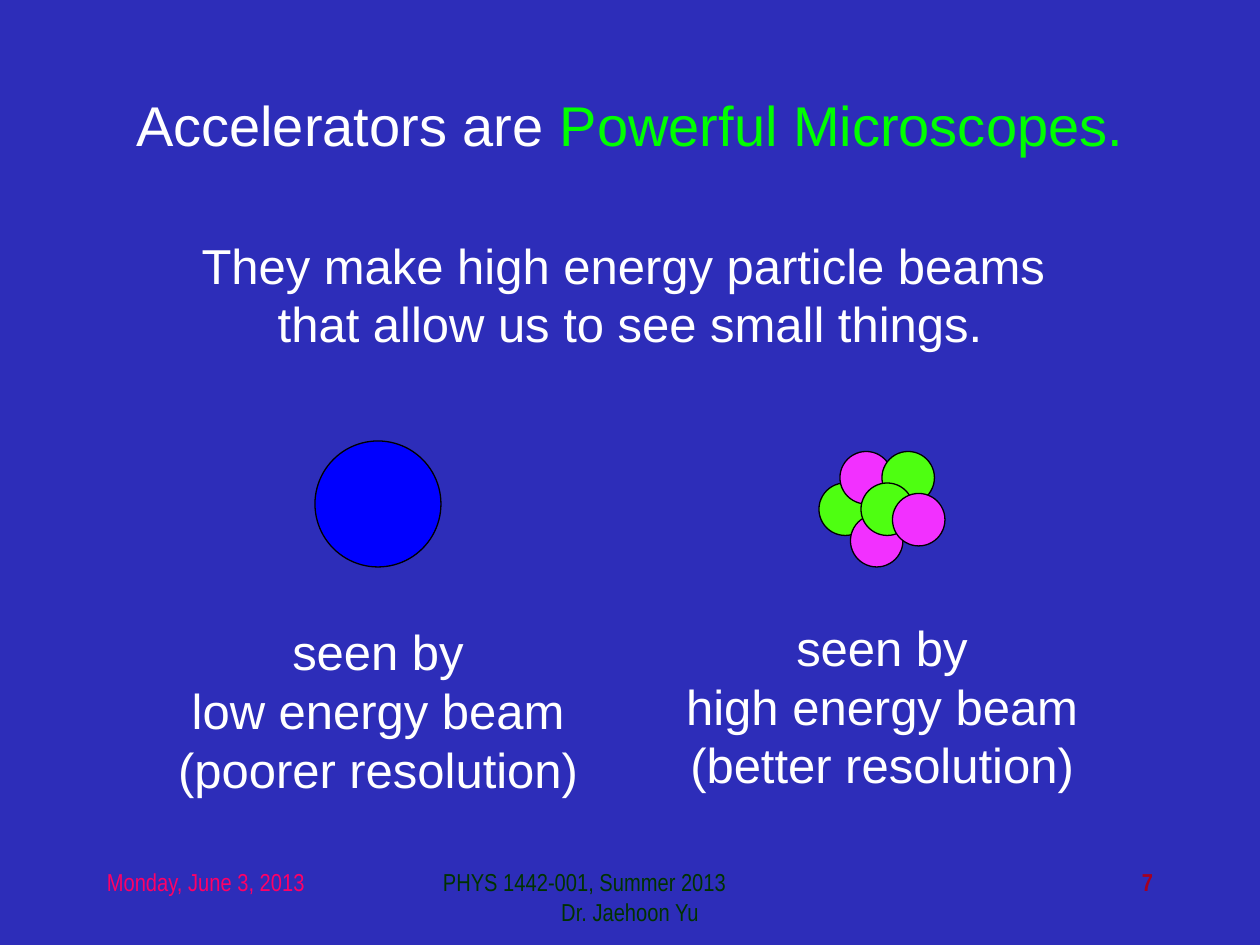
from pptx import Presentation
from pptx.dml.color import RGBColor
from pptx.enum.shapes import MSO_SHAPE as SHAPE
from pptx.enum.text import PP_ALIGN as ALIGN
from pptx.util import Inches, Pt

BACKGROUND = RGBColor(0x2D, 0x2D, 0xB9)
WHITE = RGBColor(0xFF, 0xFF, 0xFF)
BLACK = RGBColor(0x00, 0x00, 0x00)
BLUE = RGBColor(0x00, 0x00, 0xFF)
HIGHLIGHT = RGBColor(0x00, 0xFF, 0x00)
GREEN = RGBColor(0x4E, 0xFF, 0x11)
MAGENTA = RGBColor(0xF2, 0x30, 0xFF)
DATE_PINK = RGBColor(0xFF, 0x00, 0x66)
COURSE_GREEN = RGBColor(0x00, 0x33, 0x00)
NUMBER_RED = RGBColor(0xA5, 0x00, 0x21)

COLS, ROWS = 120, 90
FOOTER_ROW, FOOTER_ROWS = 82, 6


class SlideBuilder:
    """Places elements on a grid of COLS by ROWS cells."""

    def __init__(self, prs):
        self.cell_w = prs.slide_width / COLS
        self.cell_h = prs.slide_height / ROWS
        self.slide = prs.slides.add_slide(prs.slide_layouts[6])
        fill = self.slide.background.fill
        fill.solid()
        fill.fore_color.rgb = BACKGROUND

    def box(self, col, row, cols, rows):
        return (round(col * self.cell_w), round(row * self.cell_h),
                round(cols * self.cell_w), round(rows * self.cell_h))

    def text(self, area, lines, size=28, font="Arial", color=WHITE,
             aligns=(ALIGN.CENTER,), bold=False):
        """Each line is a list of (text, colour or None); the last alignment repeats."""
        tf = self.slide.shapes.add_textbox(*self.box(*area)).text_frame
        tf.word_wrap = True
        for i, runs in enumerate(lines):
            p = tf.add_paragraph() if i else tf.paragraphs[0]
            p.alignment = aligns[min(i, len(aligns) - 1)]
            p.font.size, p.font.name, p.font.bold = Pt(size), font, bold
            p.font.color.rgb = color
            for content, run_color in runs:
                r = p.add_run()
                r.text = content
                if run_color is not None:
                    r.font.color.rgb = run_color

    def plain(self, area, *lines, **style):
        self.text(area, [[(line, None)] for line in lines], **style)

    def footer(self, col, cols, *lines, **style):
        self.plain((col, FOOTER_ROW, cols, FOOTER_ROWS), *lines,
                   size=14, font="Arial Narrow", **style)

    def ball(self, col, row, size, color, shapes=None):
        shapes = self.slide.shapes if shapes is None else shapes
        sp = shapes.add_shape(SHAPE.OVAL, *self.box(col, row, size, size))
        sp.shadow.inherit = False
        sp.fill.solid()
        sp.fill.fore_color.rgb = color
        sp.line.color.rgb = BLACK
        sp.line.width = Pt(0.75)

    def cluster(self, size, balls):
        group = self.slide.shapes.add_group_shape()
        for col, row, color in balls:
            self.ball(col, row, size, color, group.shapes)


def main():
    prs = Presentation()
    prs.slide_width, prs.slide_height = Inches(10), Inches(7.5)
    s = SlideBuilder(prs)

    s.footer(9, 25, "Monday, June 3, 2013", color=DATE_PINK, aligns=(ALIGN.LEFT,))
    s.footer(41, 38, "PHYS 1442-001, Summer 2013", "Dr. Jaehoon Yu",
             color=COURSE_GREEN, aligns=(ALIGN.LEFT, ALIGN.CENTER))
    s.footer(86, 25, "7", color=NUMBER_RED, aligns=(ALIGN.RIGHT,), bold=True)

    s.ball(30, 42, 12, BLUE)
    s.cluster(5, [(78, 46, GREEN), (80, 43, MAGENTA), (81, 49, MAGENTA),
                  (84, 43, GREEN), (82, 46, GREEN), (85, 47, MAGENTA)])

    s.text((0, 8, COLS, 7.5), [[("Accelerators are ", None),
                                ("Powerful Microscopes.", HIGHLIGHT)]], size=32)
    s.plain((0, 21.8, COLS, 12.4), "They make high energy particle beams ",
            "that allow us to see small things.")
    for col, row, energy, quality in ((62, 58.2, "high", "better"),
                                      (14, 58.6, "low", "poorer")):
        s.plain((col, row, 44, 18), "seen by", f"{energy} energy beam",
                f"({quality} resolution)")

    prs.save("out.pptx")


if __name__ == "__main__":
    main()
